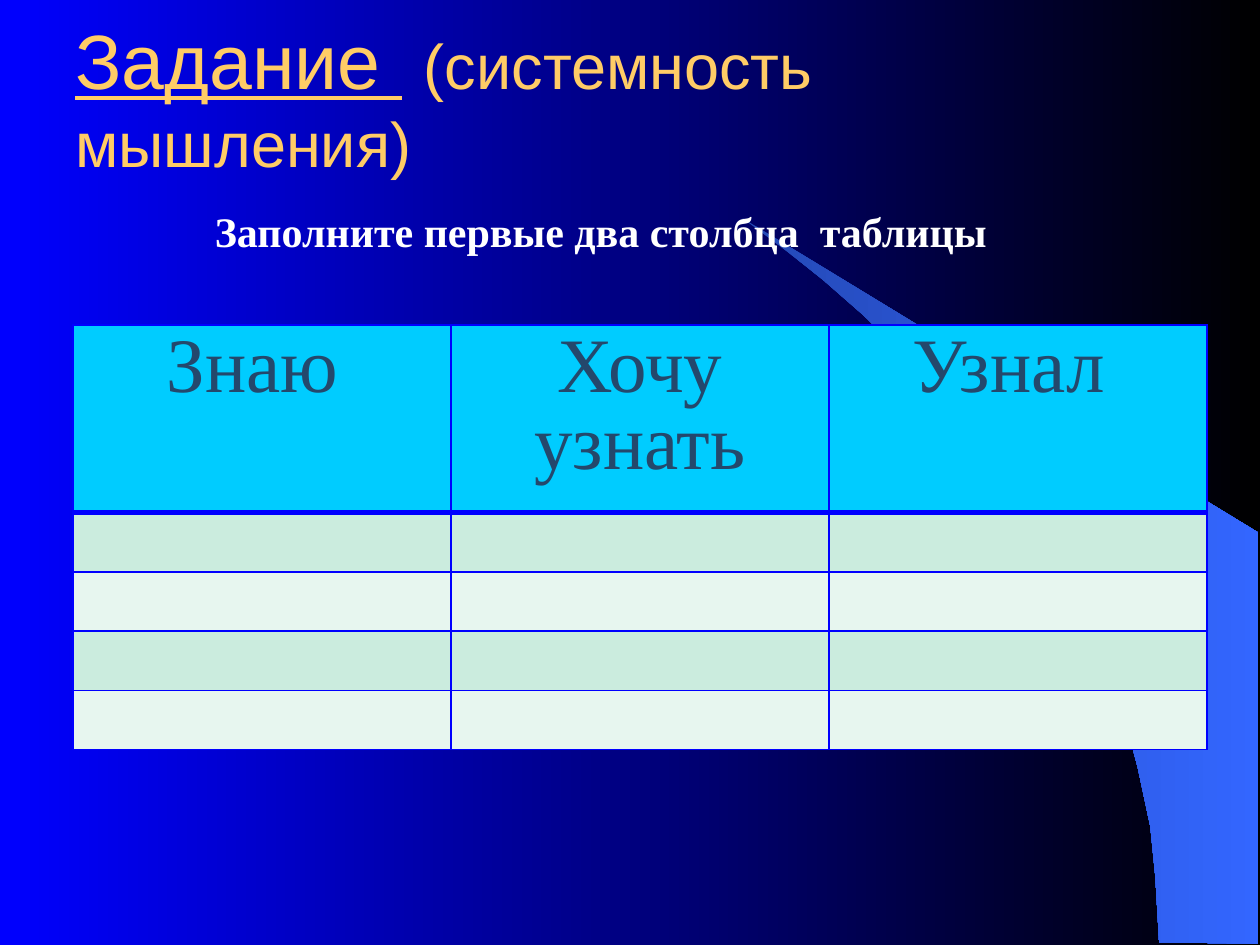
from dataclasses import dataclass

from lxml import etree
from pptx import Presentation
from pptx.dml.color import RGBColor
from pptx.enum.text import MSO_ANCHOR, PP_ALIGN
from pptx.oxml.ns import qn
from pptx.util import Pt

SCALE = 9144
MIDDLE, TOP = MSO_ANCHOR.MIDDLE, MSO_ANCHOR.TOP
LEFT, CENTER = PP_ALIGN.LEFT, PP_ALIGN.CENTER


@dataclass(frozen=True)
class Theme:
    blue: str = "0000FF"
    black: str = "000000"
    dusk: str = "2449B6"
    sky: str = "3366FF"
    gold: str = "FFCC66"
    white: str = "FFFFFF"
    ink: str = "24486C"
    head: str = "00CCFF"
    bands: tuple = ("CBECDE", "E7F6EF")
    sans: str = "Arial"
    serif: str = "Times New Roman"
    big: int = 44
    mid: int = 36
    small: int = 24
    thin: int = 1
    thick: int = 3


THEME = Theme()
TITLE = {"name": THEME.sans, "size": Pt(THEME.big), "bold": False}
HEAD = {"name": THEME.serif, "size": Pt(THEME.big), "bold": False}
NOTE = {"name": THEME.serif, "size": Pt(THEME.small), "bold": True}


def px(*nums):
    return [num * SCALE for num in nums]


def put(item, values):
    for key, value in values.items():
        setattr(item, key, value)


def write(para, text, color, form):
    run = para.add_run()
    run.text = text
    put(run.font, form)
    run.font.color.rgb = RGBColor.from_string(color)


def blend(fill, colors):
    fill.gradient()
    fill.gradient_angle = 0
    for spot, (stop, color) in enumerate(zip(fill.gradient_stops, colors)):
        stop.position = spot
        stop.color.rgb = RGBColor.from_string(color)


def add_text(slide, box, anchor, align, runs):
    frame = slide.shapes.add_textbox(*px(*box)).text_frame
    put(frame, {"word_wrap": True, "vertical_anchor": anchor})
    para = frame.paragraphs[0]
    para.alignment = align
    for text, color, form in runs:
        write(para, text, color, form)


def add_swoosh(slide, box):
    left, top, wide, high = box
    curve = [(wide, high), (wide, 250), (0, 0), (35, 26), (64, 49),
             (96, 77), (127, 107), (173, 157), (214, 211), (243, 258),
             (269, 306), (289, 355), (304, 399), (314, 436), (324, 483),
             (328, 523)]
    start = (331, high - 1)
    pen = slide.shapes.build_freeform(*start, scale=SCALE)
    pen.add_line_segments(curve, close=True)
    shape = pen.convert_to_shape(*px(left, top))
    shape.shadow.inherit = False
    shape.line.fill.background()
    blend(shape.fill, (THEME.dusk, THEME.sky))


def edge(cell, sides):
    props = cell._tc.get_or_add_tcPr()
    for side, width in sides.items():
        line = etree.SubElement(props, qn(f"a:ln{side}"), w=str(Pt(width)))
        fill = etree.SubElement(line, qn("a:solidFill"))
        etree.SubElement(fill, qn("a:srgbClr"), val=THEME.blue)


def add_grid(slide, box, heads, rows):
    table = slide.shapes.add_table(len(rows), len(heads), *px(*box)).table
    put(table, {"first_row": False, "horz_banding": False})
    for row, high in zip(table.rows, rows):
        row.height = high * SCALE
    for col in table.columns:
        col.width = box[2] * SCALE // len(heads)
    for i, row in enumerate(table.rows):
        color = THEME.bands[(i - 1) % 2] if i else THEME.head
        above = THEME.thick if i == 1 else THEME.thin
        below = THEME.thin if i else THEME.thick
        for cell in row.cells:
            edge(cell, {"L": THEME.thin, "R": THEME.thin,
                        "T": above, "B": below})
            cell.fill.solid()
            cell.fill.fore_color.rgb = RGBColor.from_string(color)
    for cell, text in zip(table.rows[0].cells, heads):
        para = cell.text_frame.paragraphs[0]
        put(para, {"alignment": CENTER, "line_spacing": 0.9})
        write(para, text, THEME.ink, HEAD)


def main():
    deck = Presentation()
    deck.slide_width, deck.slide_height = px(1000, 750)
    slide = deck.slides.add_slide(deck.slide_layouts[6])
    blend(slide.background.fill, (THEME.blue, THEME.black))
    add_swoosh(slide, (589, 173, 410, 576))
    add_text(slide, (50, 33, 825, 87), MIDDLE, LEFT, [
        ("Задание ", THEME.gold, TITLE | {"underline": True}),
        (" ", THEME.gold, TITLE),
        ("(системность мышления)", THEME.gold,
         TITLE | {"size": Pt(THEME.mid)}),
    ])
    add_grid(slide, (58, 258, 900, 337),
             ("Знаю ", "Хочу узнать", "Узнал "), (149, 47, 47, 47, 47))
    add_text(slide, (67, 158, 828, 50), TOP, CENTER, [
        ("Заполните первые два столбца  таблицы ", THEME.white, NOTE),
    ])
    deck.save("out.pptx")


if __name__ == "__main__":
    main()
